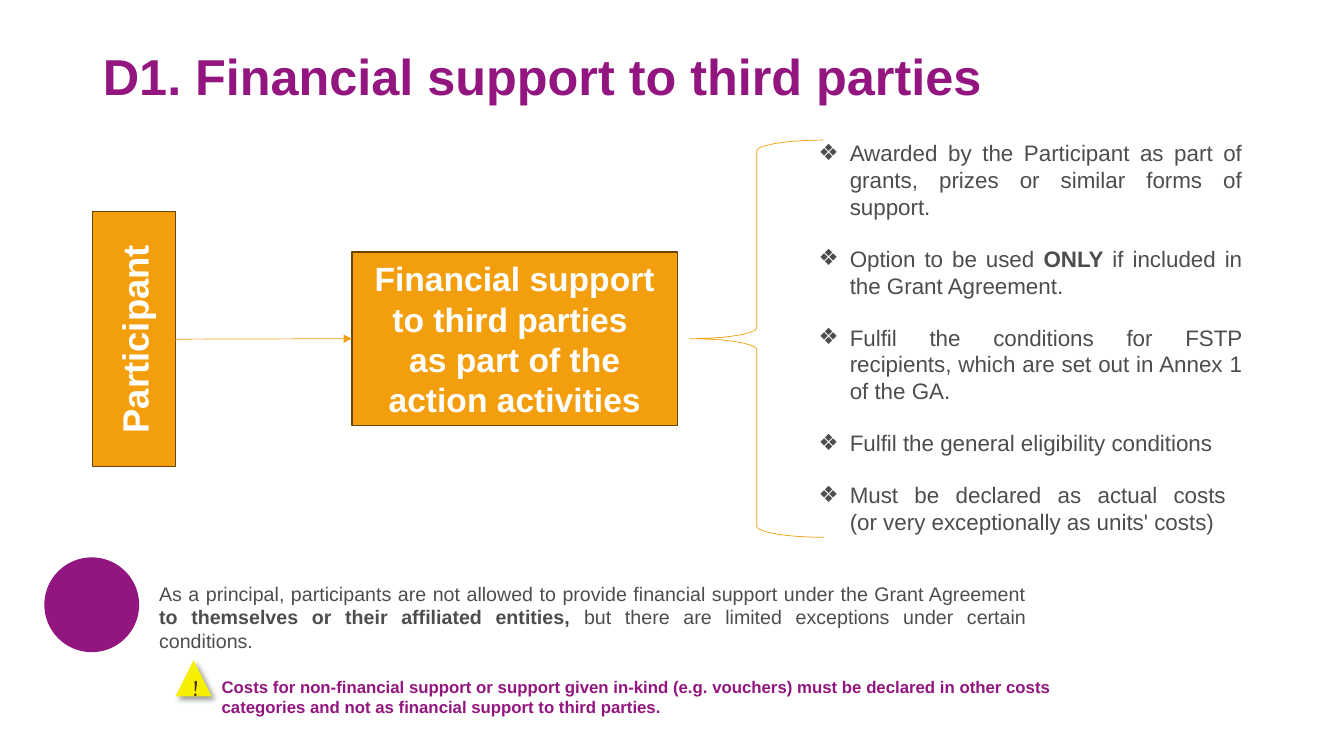
from lxml.etree import SubElement
from pptx import Presentation
from pptx.dml.color import RGBColor
from pptx.enum.shapes import MSO_CONNECTOR as Connector, MSO_SHAPE as Preset
from pptx.enum.text import MSO_ANCHOR as Anchor, PP_ALIGN as Align
from pptx.oxml.ns import qn
from pptx.util import Pt

PX = 9144
PURPLE, ORANGE, BROWN, GREY = "931680", "F39E0C", "6B4505", "4D4D4D"
WHITE, YELLOW, DARK = "FFFFFF", "F6F000", "502800"

CONDITIONS = [
    ["Awarded by the Participant as part of grants, prizes or similar forms of support."],
    ["Option to be used ", "*ONLY", " if included in the Grant Agreement."],
    ["Fulfil the conditions for FSTP recipients, which are set out in Annex 1 of the GA."],
    ["Fulfil the general eligibility conditions"],
    ["Must be declared as actual costs \n(or very exceptionally as units' costs)"],
]
PRINCIPLE = [
    "As a principal, participants are not allowed to provide financial support under the Grant Agreement ",
    "*to themselves or their affiliated entities, ",
    "but there are limited exceptions under certain conditions.",
]
WARNING = ("Costs for non-financial support or support given in-kind (e.g. vouchers) must be "
           "declared in other costs categories and not as financial support to third parties.")


def colour(value):
    return RGBColor.from_string(value)


def emu(*lengths):
    return [length * PX for length in lengths]


def add_bullet(para, symbol, indent):
    settings = para._p.get_or_add_pPr()
    settings.set("marL", str(indent * PX))
    settings.set("indent", str(-indent * PX))
    SubElement(settings, qn("a:buFont"), typeface="Arial")
    SubElement(settings, qn("a:buChar"), char=symbol)


def write(frame, paragraphs, size, ink, bold=False, align=Align.JUSTIFY,
          anchor=Anchor.TOP, bullet=None, gap=0, font="Arial"):
    frame.word_wrap = True
    frame.vertical_anchor = anchor
    for index, spans in enumerate(paragraphs):
        para = frame.paragraphs[0] if index == 0 else frame.add_paragraph()
        if bullet:
            add_bullet(para, bullet, 31)
        para.alignment = align
        if index:
            para.space_before = Pt(gap)
        for text in spans:
            strong = text.startswith("*")
            for number, line in enumerate(text.lstrip("*").split("\n")):
                if number:
                    para.add_line_break()
                span = para.add_run()
                span.text = line
                span.font.name = font
                span.font.size = Pt(size)
                span.font.bold = bold or strong
                span.font.color.rgb = colour(ink)


def add_text(page, box, paragraphs, **style):
    write(page.shapes.add_textbox(*emu(*box)).text_frame, paragraphs, **style)


def add_figure(page, preset, box, fill=None, line=None, weight=1):
    figure = page.shapes.add_shape(preset, *emu(*box))
    figure.shadow.inherit = False
    if fill:
        figure.fill.solid()
        figure.fill.fore_color.rgb = colour(fill)
    else:
        figure.fill.background()
    if line:
        figure.line.color.rgb = colour(line)
        figure.line.width = Pt(weight)
    else:
        figure.line.fill.background()
    return figure


def add_arrow(page, start, end):
    arrow = page.shapes.add_connector(Connector.STRAIGHT, 0, 0, 0, 0)
    arrow.begin_connect(start, 3)
    arrow.end_connect(end, 1)
    arrow.line.color.rgb = colour(ORANGE)
    arrow.line.width = Pt(0.5)
    SubElement(arrow.line._get_or_add_ln(), qn("a:tailEnd"), type="triangle")
    SubElement(arrow._element.spPr, qn("a:effectLst"))


def add_shadow(figure):
    effects = figure._element.spPr.find(qn("a:effectLst"))
    shadow = SubElement(effects, qn("a:outerShdw"), blurRad=str(Pt(4)), dist=str(Pt(3)),
                        dir="2700000", algn="tl", rotWithShape="0")
    shade = SubElement(shadow, qn("a:srgbClr"), val="000000")
    SubElement(shade, qn("a:alpha"), val="40000")


def place_title(page, box):
    title = page.shapes.title
    title.left, title.top, title.width, title.height = emu(*box)
    frame = title.text_frame
    frame.margin_left = frame.margin_right = 10 * PX
    frame.margin_top, frame.margin_bottom = 5 * PX, 0
    write(frame, [["D1. Financial support to third parties"]], size=36, ink=PURPLE,
          bold=True, align=Align.LEFT, anchor=Anchor.BOTTOM)


def draw_flow(page, box):
    left, top, width, height = box
    middle = top + height // 2
    label = dict(ink=WHITE, bold=True, align=Align.CENTER, anchor=Anchor.MIDDLE)
    participant = add_figure(page, Preset.RECTANGLE, (left, top, 82, height), ORANGE, BROWN)
    participant.text_frame._txBody.bodyPr.set("vert", "vert270")
    write(participant.text_frame, [["Participant"]], size=26, **label)
    support = add_figure(page, Preset.RECTANGLE,
                         (left + width - 323, middle - 86, 323, 172), ORANGE, BROWN)
    write(support.text_frame,
          [["Financial support to third parties \nas part of the action activities"]],
          size=24, **label)
    add_arrow(page, participant, support)


def draw_conditions(page, box):
    left, top, width, height = box
    add_figure(page, Preset.LEFT_BRACE, (left, top + 6, 133, height - 13), line=ORANGE, weight=0.5)
    add_text(page, (left + 118, top, width - 118, height), CONDITIONS,
             size=16, ink=GREY, bullet="❖", gap=18)


def draw_notes(page, box):
    left, top, width, height = box
    add_figure(page, Preset.OVAL, (left, top, 94, 94), PURPLE)
    add_text(page, (left + 104, top + 19, 880, 57), [PRINCIPLE], size=14, ink=GREY)
    sign = add_figure(page, Preset.ISOSCELES_TRIANGLE, (left + 130, top + 102, 36, 36), YELLOW)
    add_shadow(sign)
    write(sign.text_frame, [["!"]], size=16.3, ink=DARK, align=Align.CENTER,
          anchor=Anchor.MIDDLE, font="Cambria")
    add_text(page, (left + 166, top + 113, width - 166, height - 113), [[WARNING]],
             size=12, ink=PURPLE, bold=True)


def main():
    deck = Presentation()
    deck.slide_width, deck.slide_height = emu(1333, 750)
    page = deck.slides.add_slide(deck.slide_layouts[5])
    place_title(page, (92, 39, 1150, 66))
    draw_flow(page, (92, 210, 580, 253))
    draw_conditions(page, (684, 133, 558, 407))
    draw_notes(page, (44, 553, 1009, 163))
    deck.save("out.pptx")


if __name__ == "__main__":
    main()
